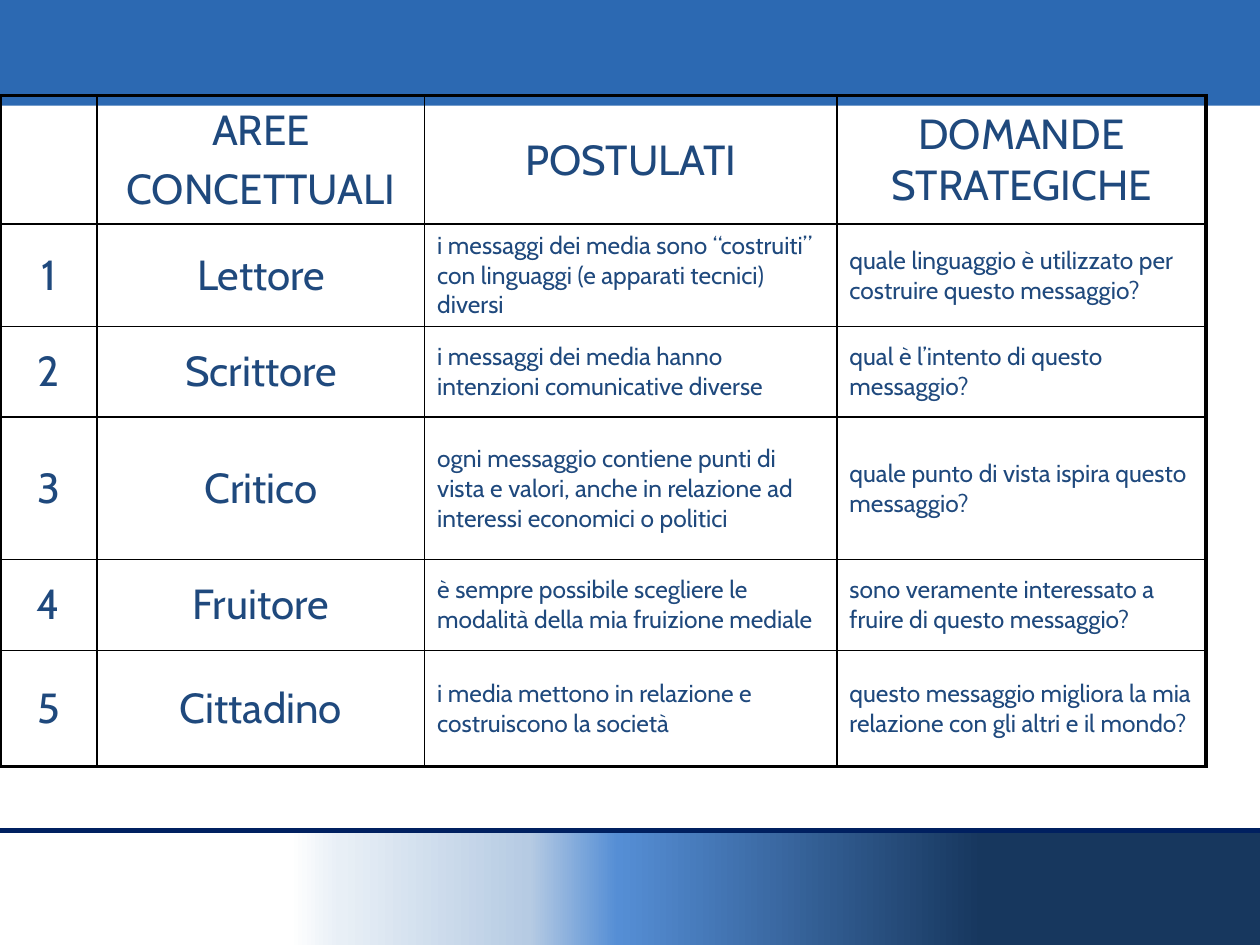
from lxml import etree
from pptx import Presentation
from pptx import util as u
from pptx.dml.color import RGBColor
from pptx.enum import shapes, text
from pptx.oxml.ns import qn

COLORS = {"band": "2C69B2", "rule": "002060", "text": "1F497D", "border": "000000"}
FOOTER_STOPS = [(23, "FFFFFF"), (27, "E8EFF6"), (42, "B6CBE3"), (49, "558ED5"), (78, "17375E")]
FONT = "Cabin"
LARGE, SMALL = 24, 14
THIN, THICK = 1, 2.25

SLIDE_WIDTH, SLIDE_HEIGHT = 25.4, 19.05
COLUMN_WIDTHS = [1.96, 6.6, 8.31, 7.44]
ROW_HEIGHTS = [2.59, 2.06, 1.83, 2.87, 1.83, 2.34]
ROWS = [
    ("", "AREE\nCONCETTUALI", "POSTULATI", "DOMANDE STRATEGICHE"),
    ("1", "Lettore",
     "i messaggi dei media sono “costruiti” con linguaggi (e apparati tecnici) diversi",
     "quale linguaggio è utilizzato per costruire questo messaggio?"),
    ("2", "Scrittore",
     "i messaggi dei media hanno intenzioni comunicative diverse",
     "qual è l’intento di questo messaggio?"),
    ("3", "Critico",
     "ogni messaggio contiene punti di vista e valori, anche in relazione ad interessi economici o politici",
     "quale punto di vista ispira questo messaggio?"),
    ("4", "Fruitore",
     "è sempre possibile scegliere le modalità della mia fruizione mediale",
     "sono veramente interessato a fruire di questo messaggio?"),
    ("5", "Cittadino",
     "i media mettono in relazione e costruiscono la società",
     "questo messaggio migliora la mia relazione con gli altri e il mondo?"),
]


def color(name):
    return RGBColor.from_string(COLORS[name])


def add_band(page, top, height):
    band = page.shapes.add_shape(shapes.MSO_SHAPE.RECTANGLE, 0, u.Cm(top),
                                 u.Cm(SLIDE_WIDTH), u.Cm(height))
    band.shadow.inherit = False
    band.line.fill.background()
    return band


def set_gradient(shape, stops):
    shape.fill.gradient()
    shape.fill.gradient_angle = 0
    stop_list = next(shape.element.iter(qn("a:gsLst")))
    for old in list(stop_list):
        stop_list.remove(old)
    for position, value in stops:
        stop = etree.SubElement(stop_list, qn("a:gs"), pos=str(position * 1000))
        etree.SubElement(stop, qn("a:srgbClr"), val=value)


def add_rule(page, y):
    rule = page.shapes.add_connector(shapes.MSO_CONNECTOR.STRAIGHT, 0, u.Cm(y),
                                     u.Cm(SLIDE_WIDTH), u.Cm(y))
    rule.line.color.rgb = color("rule")
    rule.line.width = u.Pt(2.5)
    properties = rule.element.find(qn("p:spPr"))
    etree.SubElement(properties, qn("a:effectLst"))


def set_borders(cell, outer_sides):
    properties = cell._tc.get_or_add_tcPr()
    for index, (side, is_outer) in enumerate(outer_sides.items()):
        width = u.Pt(THICK if is_outer else THIN)
        line = etree.Element(qn("a:ln" + side), w=str(int(width)))
        fill = etree.SubElement(line, qn("a:solidFill"))
        etree.SubElement(fill, qn("a:srgbClr"), val=COLORS["border"])
        properties.insert(index, line)


def fill_cell(cell, content, is_large):
    cell.fill.background()
    cell.vertical_anchor = text.MSO_ANCHOR.MIDDLE
    cell.text = content
    size = LARGE if is_large else SMALL
    for index, para in enumerate(cell.text_frame.paragraphs):
        para.alignment = text.PP_ALIGN.CENTER if is_large else text.PP_ALIGN.LEFT
        para.space_before = u.Pt(0.2 * size if index else 0)
        para.font.name = FONT
        para.font.size = u.Pt(size)
        para.font.color.rgb = color("text")


def add_grid(page):
    last_row, last_column = len(ROWS) - 1, len(COLUMN_WIDTHS) - 1
    frame = page.shapes.add_table(len(ROWS), len(COLUMN_WIDTHS), 0, u.Cm(1.93),
                                  u.Cm(sum(COLUMN_WIDTHS)), u.Cm(sum(ROW_HEIGHTS)))
    table = frame.table
    table.first_row = table.horz_banding = False
    for column, width in zip(table.columns, COLUMN_WIDTHS):
        column.width = u.Cm(width)
    for r, (row, height) in enumerate(zip(table.rows, ROW_HEIGHTS)):
        row.height = u.Cm(height)
        for c, content in enumerate(ROWS[r]):
            cell = table.cell(r, c)
            fill_cell(cell, content, is_large=r == 0 or c < 2)
            set_borders(cell, {"L": c == 0, "R": c == last_column,
                               "T": r == 0, "B": r == last_row})


def main():
    deck = Presentation()
    deck.slide_width, deck.slide_height = u.Cm(SLIDE_WIDTH), u.Cm(SLIDE_HEIGHT)
    page = deck.slides.add_slide(deck.slide_layouts[6])

    header = add_band(page, 0, 2.13)
    header.fill.solid()
    header.fill.fore_color.rgb = color("band")
    footer_top = 16.69
    set_gradient(add_band(page, footer_top, SLIDE_HEIGHT - footer_top), FOOTER_STOPS)
    add_rule(page, 16.74)
    add_grid(page)
    deck.save("out.pptx")


if __name__ == "__main__":
    main()
